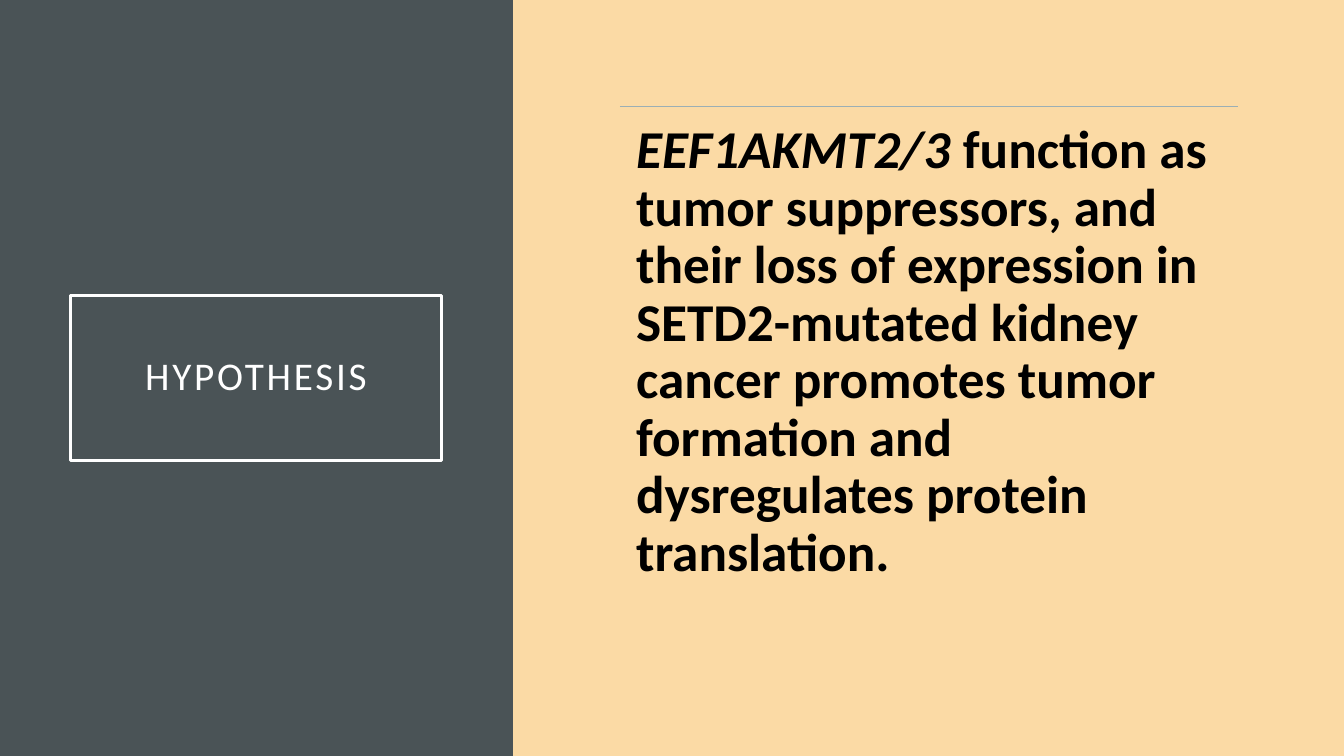
from dataclasses import dataclass
from lxml.etree import SubElement
from pptx import Presentation
from pptx.dml.color import RGBColor as RGB
from pptx.enum.shapes import MSO_CONNECTOR as Conn, MSO_SHAPE as Kind
from pptx.enum.text import MSO_ANCHOR as Anchor, MSO_AUTO_SIZE as Fit, PP_ALIGN as Align
from pptx.oxml.ns import qn
from pptx.util import Cm, Pt


@dataclass(frozen=True)
class Theme:
    back: RGB = RGB(0xFB, 0xDA, 0xA5)
    panel: RGB = RGB(0x4A, 0x53, 0x56)
    light: RGB = RGB(0xFF, 0xFF, 0xFF)
    dark: RGB = RGB(0, 0, 0)
    rule: RGB = RGB(0x9B, 0xAF, 0xB5)
    font: str = "Calibri"
    head: Pt = Pt(28)
    text: Pt = Pt(38)


THEME = Theme()
WIDE, HIGH = Cm(33.87), Cm(19.05)
SPLIT = Cm(12.93)
CLAIM = [
    ("EEF1AKMT2/3", True),
    (" function as tumor suppressors, and their loss of expression in "
     "SETD2-mutated kidney cancer promotes tumor formation and "
     "dysregulates protein translation.", False),
]


def style(item, form):
    for name, value in form.items():
        setattr(item, name, value)


def place(holder, box, inset, anchor):
    """Move a placeholder into box and set up its text frame."""
    style(holder, dict(zip(("left", "top", "width", "height"), box)))
    frame = holder.text_frame
    sides = ("left", "top", "right", "bottom")
    style(frame, {f"margin_{side}": inset for side in sides})
    style(frame, {"word_wrap": True, "auto_size": Fit.NONE,
                  "vertical_anchor": anchor})
    return frame.paragraphs[0]


def write(para, text, color, form):
    run = para.add_run()
    run.text = text
    style(run.font, {"name": THEME.font, **form})
    run.font.color.rgb = color
    return run


def side(slide, box):
    """Dark panel with the framed title across its middle."""
    left, top, width, height = box
    title = slide.shapes.title
    panel = slide.shapes.add_shape(Kind.RECTANGLE, *box)
    panel.shadow.inherit = False
    panel.fill.solid()
    panel.fill.fore_color.rgb = THEME.panel
    panel.line.fill.background()
    title.element.addprevious(panel.element)

    para = place(title, (left + Cm(1.78), top + Cm(7.44), width - Cm(3.58), Cm(4.17)),
                 Cm(0.5), Anchor.MIDDLE)
    title.line.color.rgb = THEME.light
    title.line.width = Pt(2.5)
    style(para, {"alignment": Align.CENTER, "line_spacing": 0.9})
    run = write(para, "HYPOTHESIS", THEME.light, {"size": THEME.head})
    run.font._element.set("spc", "200")


def main_text(slide, box):
    """Thin rule with the claim below it."""
    left, top, width, height = box
    x, y, span = left + Cm(2.69), top + Cm(2.69), Cm(15.57)
    rule = slide.shapes.add_connector(Conn.STRAIGHT, x, y, x + span, y)
    rule.line.color.rgb = THEME.rule
    rule.line.width = Pt(0.5)
    SubElement(rule.element.spPr, qn("a:effectLst"))

    para = place(slide.placeholders[1], (x, y, span, Cm(13.69)),
                 Cm(0.41), Anchor.TOP)
    style(para, {"alignment": Align.LEFT, "line_spacing": 0.9,
                 "space_before": Pt(0)})
    props = para._p.get_or_add_pPr()
    props.set("marL", "0")
    props.set("indent", "0")
    SubElement(props, qn("a:buNone"))
    for text, slant in CLAIM:
        write(para, text, THEME.dark,
              {"size": THEME.text, "bold": True, "italic": slant})


def main():
    deck = Presentation()
    style(deck, {"slide_width": WIDE, "slide_height": HIGH})
    slide = deck.slides.add_slide(deck.slide_layouts[1])
    slide.background.fill.solid()
    slide.background.fill.fore_color.rgb = THEME.back
    side(slide, (0, 0, SPLIT, HIGH))
    main_text(slide, (SPLIT, 0, WIDE - SPLIT, HIGH))
    deck.save("out.pptx")


if __name__ == "__main__":
    main()
